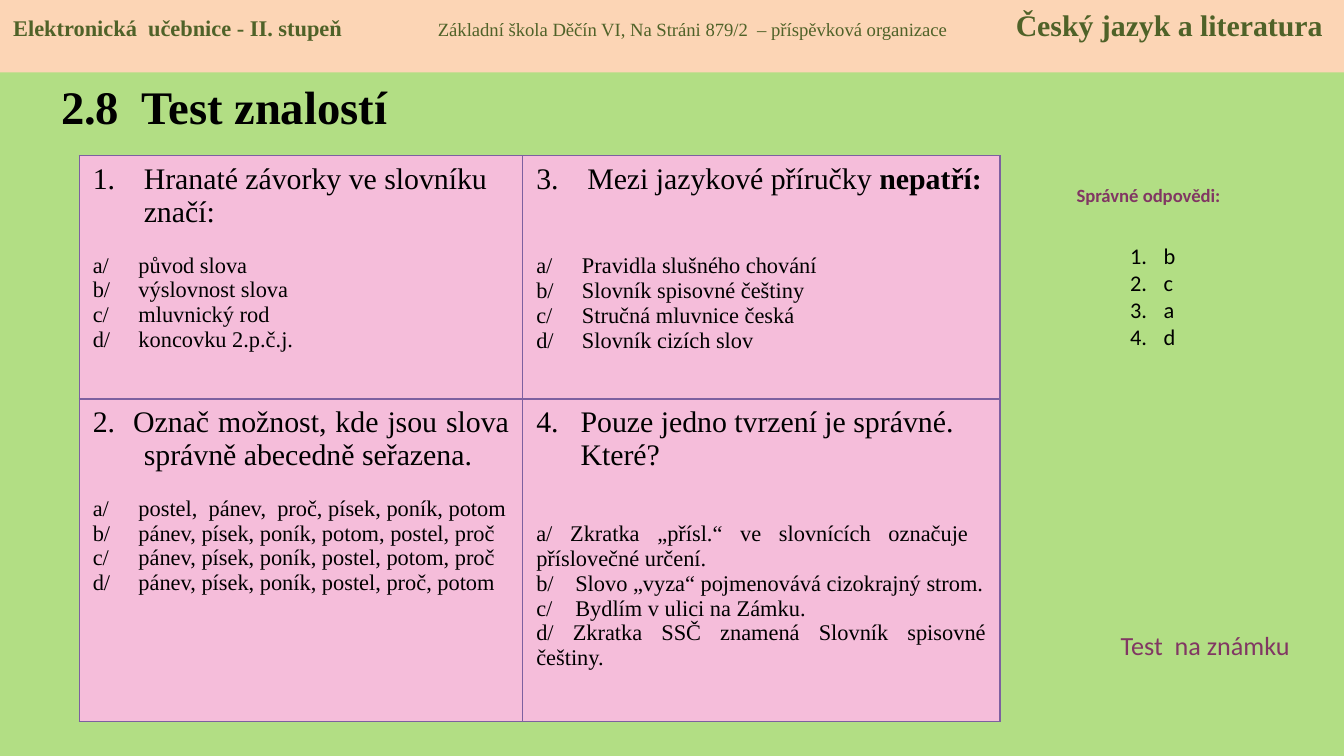
import pptx
import pptx.util
import pptx.dml.color
import pptx.enum.text
import pptx.enum.shapes
import pptx.oxml.ns
import lxml.etree

Pt, Inches = pptx.util.Pt, pptx.util.Inches
ALIGN = pptx.enum.text.PP_ALIGN
qn = pptx.oxml.ns.qn

# Theme
THEME = {
    "serif": "Times New Roman", "sans": "Calibri",
    "back": "B2DE84", "bar": "FCD5B5", "cell": "F5BDDA", "border": "7D60A0",
    "ink": "000000", "green": "4F6228", "plum": "813763",
    "title": 25, "question": 16, "option": 12, "small": 10, "note": 14,
}

# Content
HEADER = [("Elektronická  učebnice - II. stupeň", "option", True),
          ("Základní škola Děčín VI, Na Stráni 879/2  – příspěvková organizace", "small", False),
          ("Český jazyk a literatura", "question", True)]
HEADER_TABS = (3.16, 7.46)
TITLE = "2.8  Test znalostí"
# "auto" numbers the question as a list, otherwise the number is typed;
# options named in "full" run the whole cell width, justified
QUESTIONS = [
    [dict(auto=1, runs=[("Hranaté závorky ve slovníku značí:", False)], gap=13,
          options=["původ slova", "výslovnost slova", "mluvnický rod", "koncovku 2.p.č.j."]),
     dict(auto=3, runs=[("Mezi jazykové příručky ", False), ("nepatří:", True)], gap=31,
          options=["Pravidla slušného chování", "Slovník spisovné češtiny",
                   "Stručná mluvnice česká", "Slovník cizích slov"])],
    [dict(runs=[("2.  Označ možnost, kde jsou slova správně abecedně seřazena.", False)],
          justify=True, gap=13,
          options=["postel,  pánev,  proč, písek, poník, potom",
                   "pánev, písek, poník, potom, postel, proč",
                   "pánev, písek, poník, postel, potom, proč",
                   "pánev, písek, poník, postel, proč, potom"]),
     dict(runs=[("4.\tPouze jedno tvrzení je správné.", False)], second="Které?",
          hang=0.33, gap=26.5, full="ad", option_tab=0.29,
          options=["Zkratka „přísl.“ ve slovnících označuje  příslovečné určení.",
                   "Slovo „vyza“ pojmenovává cizokrajný strom.",
                   "Bydlím v ulici na Zámku.",
                   "Zkratka SSČ znamená Slovník spisovné češtiny."])],
]
COLUMNS, ROWS = (3.3, 3.55), (1.81, 2.4)
ANSWERS_TITLE, ANSWERS = "Správné odpovědi:", ["b", "c", "a", "d"]
NOTE = "Test  na známku"

prs = pptx.Presentation()
prs.slide_width = Inches(10)
prs.slide_height = prs.slide_width * 9 // 16


def color(name):
    return pptx.dml.color.RGBColor.from_string(THEME[name])


def place(left, top, width, height):
    """Percentages of the slide as lengths."""
    w, h = prs.slide_width, prs.slide_height
    return [int(n * side / 100) for n, side in zip((left, top, width, height), (w, h, w, h))]


def add_run(p, text, size, font="serif", ink="ink", bold=False):
    r = p.add_run()
    r.text = text
    r.font.name, r.font.size, r.font.bold = THEME[font], Pt(THEME[size]), bold
    r.font.color.rgb = color(ink)


def indent(p, left, first=None):
    """Hanging indent unless the first line has its own."""
    pPr = p._p.get_or_add_pPr()
    pPr.set("marL", str(Inches(left)))
    pPr.set("indent", str(Inches(-left if first is None else first)))


def number(p, start=1):
    pPr = p._p.get_or_add_pPr()
    lxml.etree.SubElement(pPr, qn("a:buFont"), typeface="+mj-lt")
    bu = lxml.etree.SubElement(pPr, qn("a:buAutoNum"), type="arabicPeriod")
    if start > 1:
        bu.set("startAt", str(start))


def tabs(p, *stops):
    tab_list = lxml.etree.SubElement(p._p.get_or_add_pPr(), qn("a:tabLst"))
    for stop in stops:
        lxml.etree.SubElement(tab_list, qn("a:tab"), pos=str(Inches(stop)), algn="l")


def add_text_box(s, box):
    tf = s.shapes.add_textbox(*place(*box)).text_frame
    tf.word_wrap = True
    return tf


def style_cell(cell):
    cell.fill.solid()
    cell.fill.fore_color.rgb = color("cell")
    tcPr = cell._tc.get_or_add_tcPr()
    for i, side in enumerate(("lnL", "lnR", "lnT", "lnB")):
        ln = lxml.etree.Element(qn("a:" + side), w=str(Pt(0.75)))
        fill = lxml.etree.SubElement(ln, qn("a:solidFill"))
        lxml.etree.SubElement(fill, qn("a:srgbClr"), val=THEME["border"])
        tcPr.insert(i, ln)


def fill_cell(cell, q):
    style_cell(cell)
    tf = cell.text_frame
    hang = q.get("hang", 0.38)
    p = tf.paragraphs[0]
    p.alignment = ALIGN.JUSTIFY if q.get("justify") else ALIGN.LEFT
    indent(p, hang)
    if "auto" in q:
        number(p, q["auto"])
    for text, bold in q["runs"]:
        add_run(p, text, "question", bold=bold)
    if "second" in q:
        p = tf.add_paragraph()
        indent(p, hang, 0)
        add_run(p, q["second"], "question")
    for i, (letter, option) in enumerate(zip("abcd", q["options"])):
        p = tf.add_paragraph()
        if i == 0:
            p.space_before = Pt(q["gap"])
        full = letter in q.get("full", "")
        p.alignment = ALIGN.JUSTIFY if full else ALIGN.LEFT
        if "option_tab" in q:
            tabs(p, q["option_tab"])
        else:
            indent(p, 0.34)
        add_run(p, letter + "/" + (" " if full else "\t") + option, "option")


# Slide and title
s = prs.slides.add_slide(prs.slide_layouts[5])
s.background.fill.solid()
s.background.fill.fore_color.rgb = color("back")
title = s.shapes.title
title.left, title.top, title.width, title.height = place(3.54, 10.2, 35.4, 7.65)
title.text_frame.vertical_anchor = pptx.enum.text.MSO_ANCHOR.MIDDLE
p = title.text_frame.paragraphs[0]
p.alignment = ALIGN.LEFT
add_run(p, TITLE, "title", bold=True)

# Heading of the answers
p = add_text_box(s, (77.6, 23.5, 15.7, 4.8)).paragraphs[0]
p.alignment = ALIGN.CENTER
add_run(p, ANSWERS_TITLE, "small", "sans", "plum", True)

# Question table
table = s.shapes.add_table(2, 2, *place(5.9, 20.6, 68.5, 74.84)).table
table.first_row = table.horz_banding = False
for column, width in zip(table.columns, COLUMNS):
    column.width = Inches(width)
for row, height in zip(table.rows, ROWS):
    row.height = Inches(height)
for i, line in enumerate(QUESTIONS):
    for j, question in enumerate(line):
        fill_cell(table.cell(i, j), question)

# Answer list
tf = add_text_box(s, (83.1, 31.15, 5.5, 19.7))
for i, answer in enumerate(ANSWERS):
    p = tf.add_paragraph() if i else tf.paragraphs[0]
    indent(p, 0.25)
    number(p)
    add_run(p, answer, "option", "sans")

# Note
p = add_text_box(s, (82.4, 82.4, 15.7, 6)).paragraphs[0]
add_run(p, NOTE, "note", "sans", "plum")

# Header bar
bar = s.shapes.add_shape(pptx.enum.shapes.MSO_SHAPE.RECTANGLE, *place(0, 0, 100, 9.6))
bar.shadow.inherit = False
bar.fill.solid()
bar.fill.fore_color.rgb = color("bar")
bar.line.fill.background()
tf = bar.text_frame
tf.word_wrap = True
tf.vertical_anchor = pptx.enum.text.MSO_ANCHOR.TOP
p = tf.paragraphs[0]
p.alignment = ALIGN.LEFT
tabs(p, *HEADER_TABS)
for i, (text, size, bold) in enumerate(HEADER):
    add_run(p, ("\t" if i else "") + text, size, ink="green", bold=bold)

prs.save("out.pptx")
